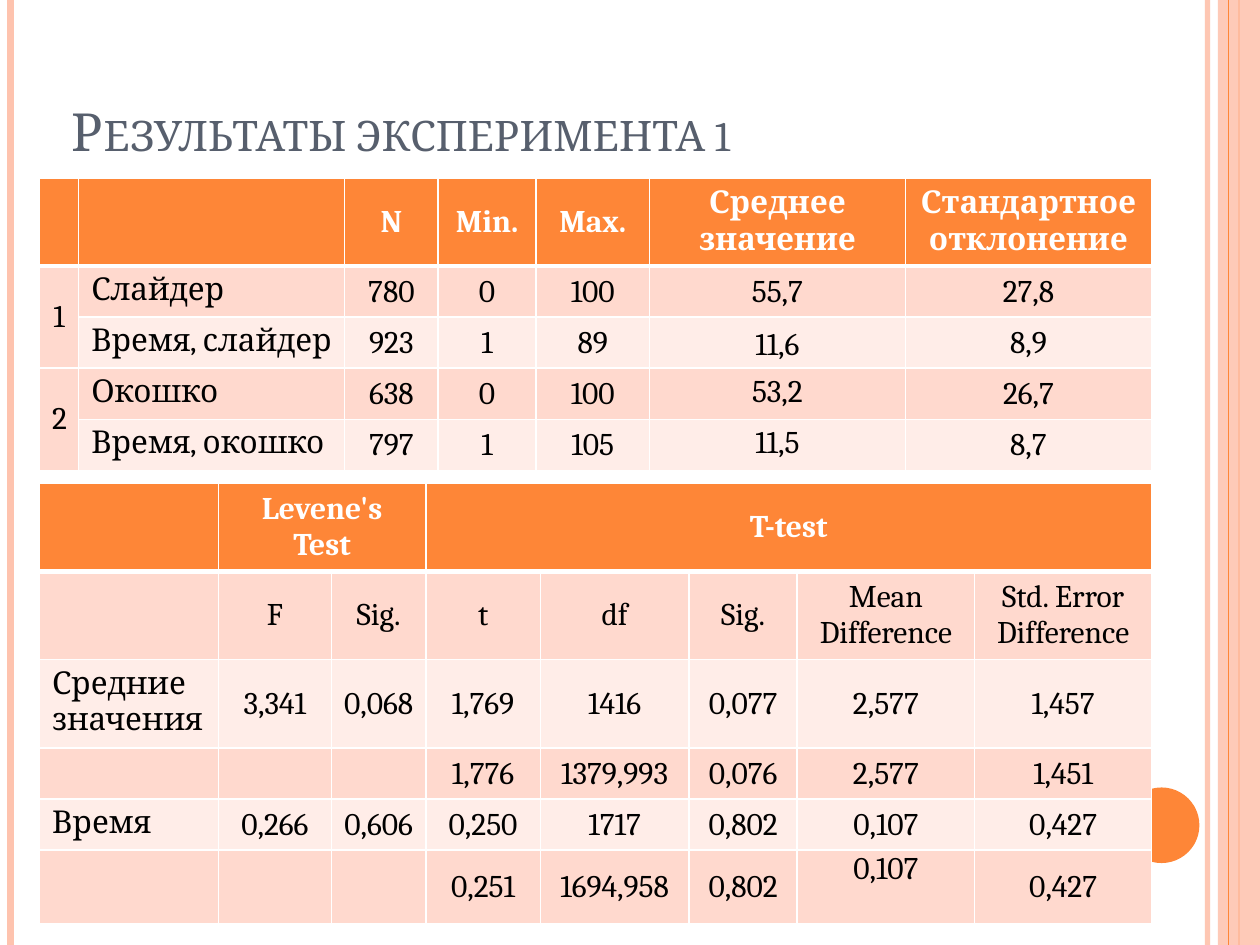
from lxml import etree
from pptx import Presentation
from pptx.dml.color import RGBColor
from pptx.enum.shapes import MSO_CONNECTOR, MSO_SHAPE
from pptx.enum.text import MSO_ANCHOR, PP_ALIGN
from pptx.oxml.ns import qn
from pptx.util import Pt

STRAIGHT = MSO_CONNECTOR.STRAIGHT
RECTANGLE, OVAL = MSO_SHAPE.RECTANGLE, MSO_SHAPE.OVAL
TOP, MIDDLE, BOTTOM = MSO_ANCHOR.TOP, MSO_ANCHOR.MIDDLE, MSO_ANCHOR.BOTTOM
LEFT, CENTER = PP_ALIGN.LEFT, PP_ALIGN.CENTER

FONT = "Cambria"
COLORS = {
    "accent": "FE8637",
    "pale": "FEC3AE",
    "title": "575F6D",
    "band_dark": "FFD9CE",
    "band_light": "FFEDE8",
    "white": "FFFFFF",
    "black": "000000",
}

SUMMARY_WIDTHS = [22.4, 152, 53.4, 56, 64.8, 146.2, 140.8]
SUMMARY_HEIGHTS = [48] + [29.2] * 4
SUMMARY_ROWS = [
    ["", "", "N", "Min.", "Max.", "Среднее значение", "Стандартное отклонение"],
    ["1", "Слайдер", "780", "0", "100", "55,7", "27,8"],
    ["", "Время, слайдер", "923", "1", "89", "11,6", "8,9"],
    ["2", "Окошко", "638", "0", "100", "53,2", "26,7"],
    ["", "Время, окошко", "797", "1", "105", "11,5", "8,7"],
]
TEST_WIDTHS = [102.2, 64.6, 54, 65.4, 85, 61.8, 101.4, 101.2]
TEST_HEIGHTS = [48, 49, 49, 29.2, 29.2, 42]
TEST_ROWS = [
    ["", "Levene's Test", "", "T-test", "", "", "", ""],
    ["", "F", "Sig.", "t", "df", "Sig.", "Mean Difference", "Std. Error Difference"],
    ["Средние значения", "3,341", "0,068", "1,769", "1416", "0,077", "2,577", "1,457"],
    ["", "", "", "1,776", "1379,993", "0,076", "2,577", "1,451"],
    ["Время", "0,266", "0,606", "0,250", "1717", "0,802", "0,107", "0,427"],
    ["", "", "", "0,251", "1694,958", "0,802", "0,107", "0,427"],
]


def color(name):
    return RGBColor.from_string(COLORS[name])


def set_alpha(shape, percent):
    for element in shape._element.spPr.iter(qn("a:srgbClr")):
        etree.SubElement(element, qn("a:alpha")).set("val", str(percent * 1000))


def add_rule(slide, x, height, width, color_name):
    rule = slide.shapes.add_connector(STRAIGHT, Pt(x), Pt(0), Pt(x), Pt(height))
    rule.line.color.rgb = color(color_name)
    rule.line.width = Pt(width)
    etree.SubElement(rule._element.spPr, qn("a:effectLst"))
    return rule


def add_plain_shape(slide, kind, left, top, width, height, color_name):
    shape = slide.shapes.add_shape(kind, Pt(left), Pt(top), Pt(width), Pt(height))
    shape.shadow.inherit = False
    shape.fill.solid()
    shape.fill.fore_color.rgb = color(color_name)
    shape.line.fill.background()
    return shape


def add_frame(slide, width, height):
    set_alpha(add_rule(slide, width - 30, height, 3, "pale"), 93)
    add_rule(slide, 6, height, 4.5, "pale")
    add_rule(slide, width - 12, height, 1.5, "accent")
    band = add_plain_shape(slide, RECTANGLE, width - 24, 0, 24, height, "pale")
    set_alpha(band, 87)
    add_rule(slide, width - 18, height, 0.75, "accent")
    add_plain_shape(slide, OVAL, width - 77.8, height - 90, 43.2, 43.2, "accent")


def add_run(paragraph, text, size, color_name, bold=False):
    run = paragraph.add_run()
    run.text = text
    run.font.name = FONT
    run.font.size = Pt(size)
    run.font.bold = bold
    run.font.color.rgb = color(color_name)
    return run


def add_title(slide, left, top, width, height):
    box = slide.shapes.add_textbox(Pt(left), Pt(top), Pt(width), Pt(height))
    frame = box.text_frame
    frame.word_wrap = True
    frame.vertical_anchor = BOTTOM
    run = add_run(frame.paragraphs[0], "Результаты эксперимента 1", 30, "title")
    run.font._element.set("cap", "small")


def set_borders(cell, row):
    widths = {"L": 1, "R": 1, "T": 3 if row == 1 else 1, "B": 3 if row == 0 else 1}
    properties = cell._tc.get_or_add_tcPr()
    for side, width in widths.items():
        line = etree.SubElement(properties, qn(f"a:ln{side}"))
        line.set("w", str(Pt(width)))
        fill = etree.SubElement(line, qn("a:solidFill"))
        etree.SubElement(fill, qn("a:srgbClr")).set("val", COLORS["white"])


def set_margins(cell, side, top, bottom):
    cell.margin_left = cell.margin_right = Pt(side)
    cell.margin_top, cell.margin_bottom = Pt(top), Pt(bottom)


def add_table(slide, left, top, widths, heights, rows, label_column, first_value_row, merges):
    graphic = slide.shapes.add_table(
        len(rows), len(widths), Pt(left), Pt(top), Pt(sum(widths)), Pt(sum(heights))
    )
    table = graphic.table
    table.horz_banding = False
    for column, width in zip(table.columns, widths):
        column.width = Pt(width)
    for table_row, height in zip(table.rows, heights):
        table_row.height = Pt(height)
    for first, last in merges:
        table.cell(*first).merge(table.cell(*last))
    for row, texts in enumerate(rows):
        fill_name = "accent" if row == 0 else "band_dark" if row % 2 else "band_light"
        for column, text in enumerate(texts):
            cell = table.cell(row, column)
            set_borders(cell, row)
            cell.fill.solid()
            cell.fill.fore_color.rgb = color(fill_name)
            is_label = row > 0 and column == label_column
            cell.vertical_anchor = TOP if is_label else MIDDLE
            if row >= first_value_row and column > label_column:
                set_margins(cell, 0.72, 0.72, 0)
            paragraph = cell.text_frame.paragraphs[0]
            paragraph.alignment = LEFT if is_label else CENTER
            if text:
                add_run(paragraph, text, 18, "black" if row else "white", row == 0)
    return table


def add_summary_table(slide, left, top):
    merges = [((1, 0), (2, 0)), ((3, 0), (4, 0))]
    table = add_table(slide, left, top, SUMMARY_WIDTHS, SUMMARY_HEIGHTS,
                      SUMMARY_ROWS, 1, 1, merges)
    for row, anchor in ((2, MIDDLE), (3, TOP), (4, TOP)):
        cell = table.cell(row, 5)
        set_margins(cell, 5, 0, 0)
        cell.vertical_anchor = anchor
        cell.text_frame.paragraphs[0].line_spacing = 1.15


def add_test_table(slide, left, top):
    merges = [((0, 1), (0, 2)), ((0, 3), (0, 7))]
    table = add_table(slide, left, top, TEST_WIDTHS, TEST_HEIGHTS,
                      TEST_ROWS, 0, 2, merges)
    table.cell(5, 6).vertical_anchor = TOP


def main():
    presentation = Presentation()
    presentation.slide_width, presentation.slide_height = Pt(720), Pt(540)
    slide = presentation.slides.add_slide(presentation.slide_layouts[6])
    add_frame(slide, 720, 540)
    add_title(slide, 34, 50.4, 588, 46)
    add_summary_table(slide, 22.6, 101.6)
    add_test_table(slide, 22.6, 276)
    presentation.save("out.pptx")


if __name__ == "__main__":
    main()
